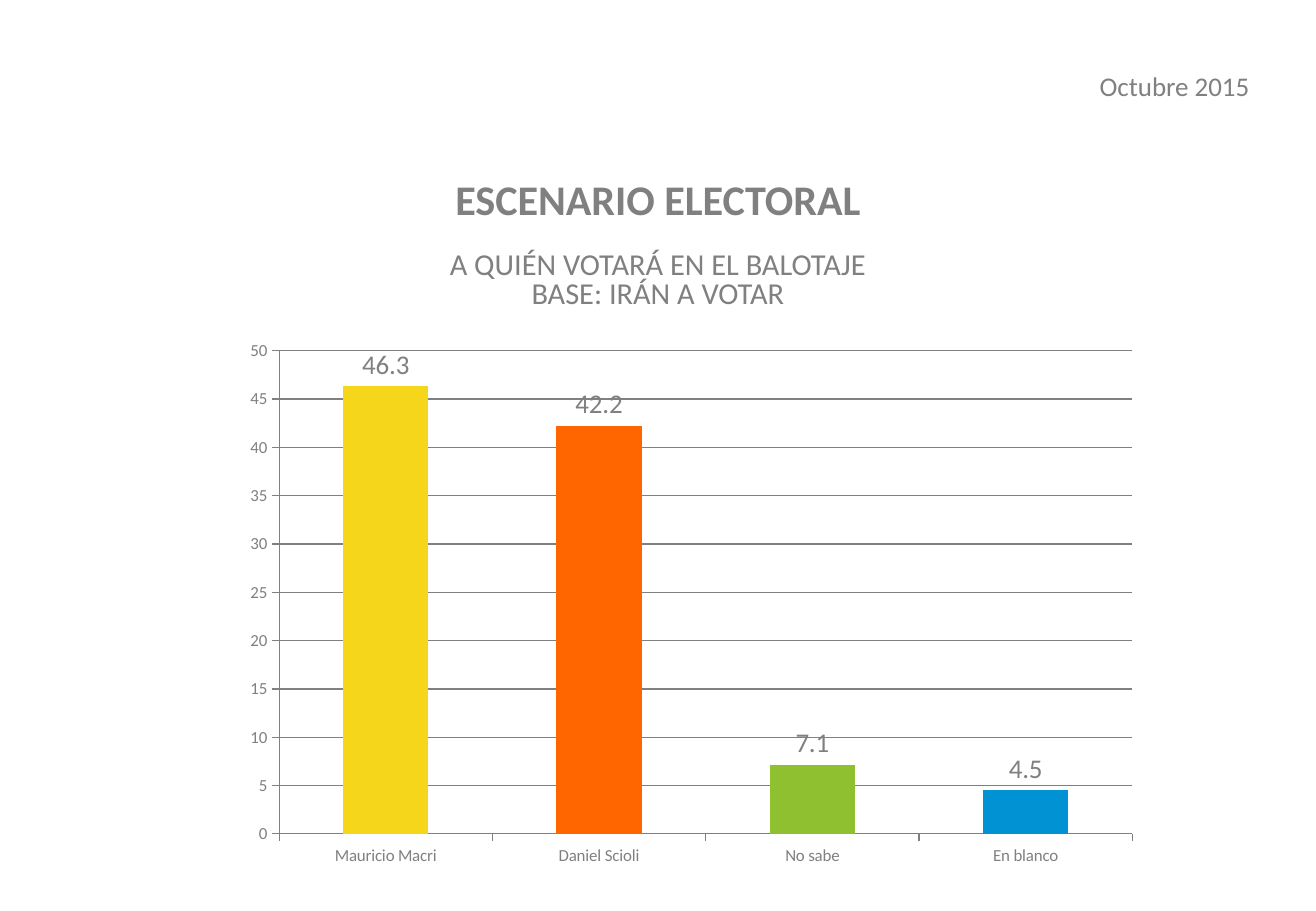
from pptx import Presentation
from pptx import util as u
from pptx.chart.data import CategoryChartData
from pptx.dml.color import RGBColor
from pptx.enum import chart as ch, text

FACE = "Calibri"
GREY = "808080"
VOTES = [
    ("Mauricio Macri", 46.3, "F5D61B"),
    ("Daniel Scioli", 42.2, "FF6600"),
    ("No sabe", 7.1, "8EC02F"),
    ("En blanco", 4.5, "0092D2"),
]


def paint(part, color):
    """Give a font or a solid fill its colour."""
    target = part.color if hasattr(part, "color") else part.fore_color
    target.rgb = RGBColor.from_string(color)


def style(font, size, bold=False):
    font.name = FACE
    font.size = u.Pt(size)
    font.bold = bold
    paint(font, GREY)


def add_text(slide, box, lines, align, spacing=None, top=0.05):
    """Each line is (words, size, bold, space before)."""
    frame = slide.shapes.add_textbox(*map(u.Inches, box)).text_frame
    frame.word_wrap = True
    frame.margin_top = u.Inches(top)
    for i, (words, size, bold, before) in enumerate(lines):
        para = frame.paragraphs[0] if i == 0 else frame.add_paragraph()
        para.alignment = align
        if spacing:
            para.line_spacing = spacing
        if before:
            para.space_before = u.Pt(before)
        run = para.add_run()
        run.text = words
        style(run.font, size, bold)


def add_votes(slide, box):
    data = CategoryChartData()
    data.categories = [name for name, _, _ in VOTES]
    data.add_series("Series 1", [share for _, share, _ in VOTES])
    chart = slide.shapes.add_chart(
        ch.XL_CHART_TYPE.COLUMN_CLUSTERED, *map(u.Inches, box), data).chart
    chart.has_legend = False
    chart.has_title = False
    style(chart.font, 10)

    # Axes
    for axis in (chart.category_axis, chart.value_axis):
        axis.major_tick_mark = ch.XL_TICK_MARK.OUTSIDE
        paint(axis.format.line, GREY)
    value = chart.value_axis
    value.minimum_scale, value.maximum_scale, value.major_unit = 0, 50, 5
    value.has_major_gridlines = True
    paint(value.major_gridlines.format.line, GREY)

    # Columns, one colour each
    plot = chart.plots[0]
    plot.gap_width = 150
    plot.vary_by_categories = False
    series = plot.series[0]
    for i, (_, _, color) in enumerate(VOTES):
        fill = series.points[i].format.fill
        fill.solid()
        paint(fill, color)

    # Values above the columns
    labels = series.data_labels
    labels.show_value = True
    labels.position = ch.XL_LABEL_POSITION.OUTSIDE_END
    style(labels.font, 16)


def main():
    deck = Presentation()
    deck.slide_width, deck.slide_height = u.Inches(10.83), u.Inches(7.5)
    slide = deck.slides.add_slide(deck.slide_layouts[6])

    add_votes(slide, (1.91, 2.72, 7.56, 4.49))
    # Heading
    add_text(slide, (0, 1.49, 10.83, 1.2), [
        ("ESCENARIO ELECTORAL", 25, True, 0),
        ("A QUIÉN VOTARÁ EN EL BALOTAJE", 18, False, 16.7),
        ("BASE: IRÁN A VOTAR", 18, False, 0),
    ], text.PP_ALIGN.CENTER, spacing=0.8, top=0.02)
    # Date
    add_text(slide, (8.57, 0.52, 1.81, 0.37),
             [("Octubre 2015", 16, False, 0)], text.PP_ALIGN.RIGHT)
    deck.save("out.pptx")


if __name__ == "__main__":
    main()
